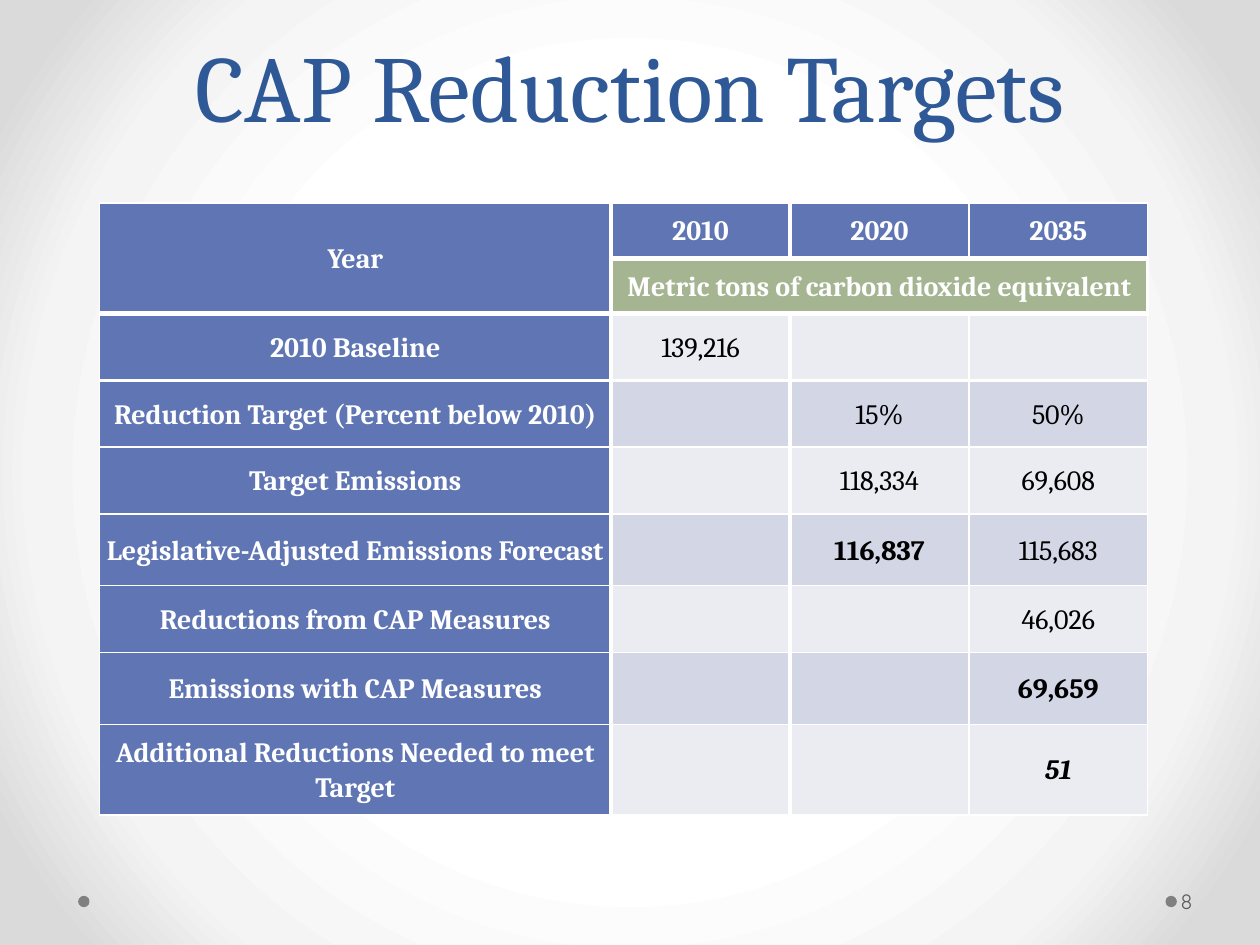
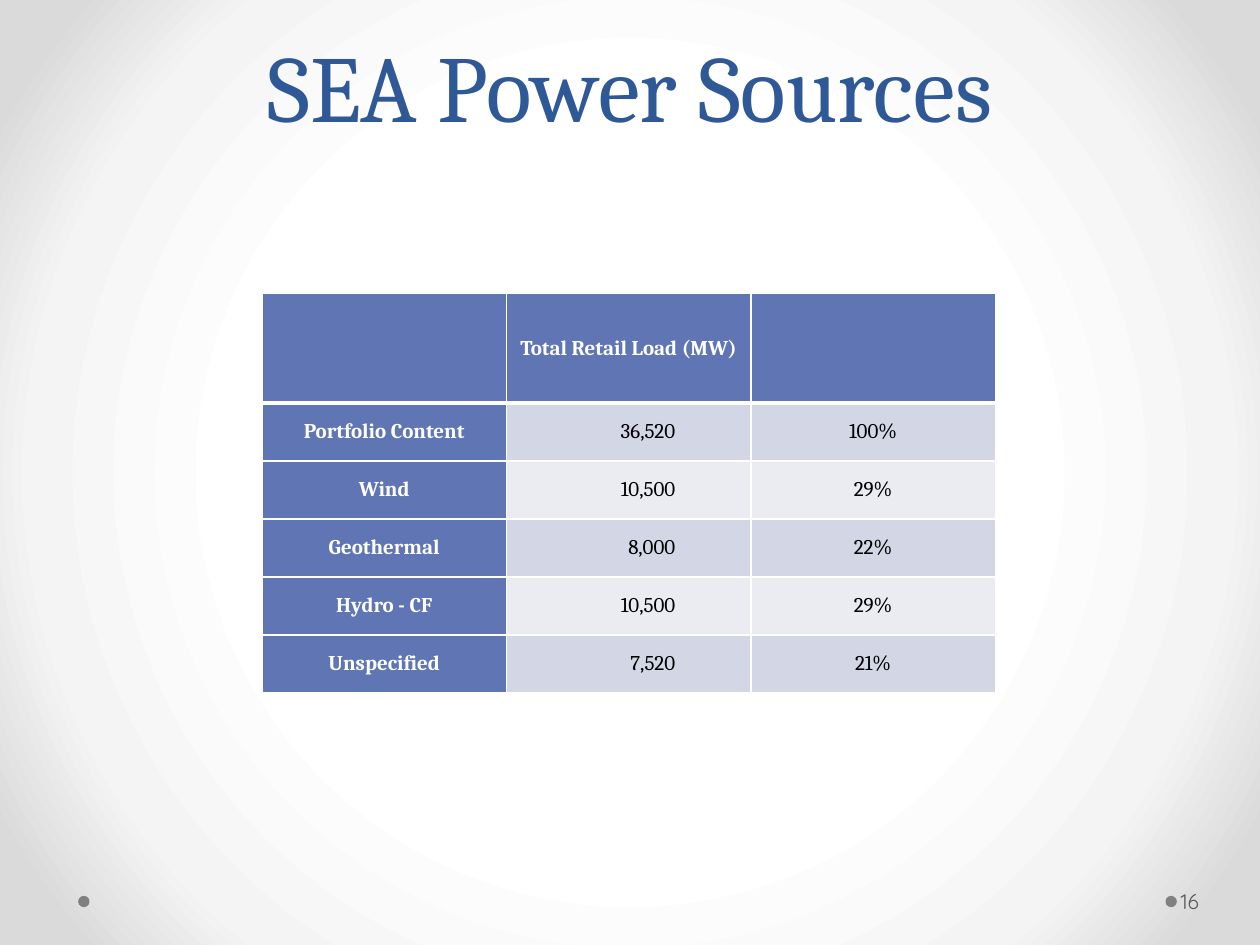
import pptx
import pptx.util
import pptx.dml.color
import pptx.enum.shapes
import pptx.enum.text
import pptx.oxml
import pptx.oxml.ns

Inches = pptx.util.Inches
Pt = pptx.util.Pt
Align = pptx.enum.text.PP_ALIGN
Anchor = pptx.enum.text.MSO_ANCHOR

WHITE = "FFFFFF"
BLACK = "000000"
NAVY = "2F5897"
BLUE = "6076B4"
GREEN = "A5B592"
BANDS = ("EAECF2", "D2D6E5")
DOT = "808080"
GRAY = "595959"
SERIF = "Cambria"
SANS = "Quicksand"
GLOW = ((50, WHITE), (76, "F4F4F4"), (92, "DADADA"))

GOALS = [
    ["Year", "2010", "2020", "2035"],
    ["", "Metric tons of carbon dioxide equivalent", "", ""],
    ["2010 Baseline", "139,216", "", ""],
    ["Reduction Target (Percent below 2010)", "", "15%", "50%"],
    ["Target Emissions", "", "118,334", "69,608"],
    ["Legislative-Adjusted Emissions Forecast", "", "116,837", "115,683"],
    ["Reductions from CAP Measures", "", "", "46,026"],
    ["Emissions with CAP Measures", "", "", "69,659"],
    ["Additional Reductions Needed to meet Target", "", "", "51"],
]
STRONG = ("116,837", "69,659", "51")

POWER = [
    ["", "Total Retail Load (MW)", ""],
    ["Portfolio Content", "36,520", "100%"],
    ["Wind", "10,500", "29%"],
    ["Geothermal", "8,000", "22%"],
    ["Hydro - CF", "10,500", "29%"],
    ["Unspecified", "7,520", "21%"],
]


def tint(code):
    return pptx.dml.color.RGBColor.from_string(code)


def paint(fill, code):
    fill.solid()
    fill.fore_color.rgb = tint(code)


def write(frame, text, size=12, font=SERIF, color=BLACK, bold=False,
          slant=False, align=Align.CENTER, lead=None, after=None):
    para = frame.paragraphs[0]
    para.alignment = align
    para.line_spacing = lead
    para.space_after = after
    run = para.add_run()
    run.text = text
    run.font.size = Pt(size)
    run.font.name = font
    run.font.bold = bold
    run.font.italic = slant
    run.font.color.rgb = tint(color)


def inset(frame, left, top, right, base):
    frame.margin_left = Inches(left)
    frame.margin_top = Inches(top)
    frame.margin_right = Inches(right)
    frame.margin_bottom = Inches(base)


def backdrop(master):
    master.background.fill.gradient()
    grad = master.element.find(".//" + pptx.oxml.ns.qn("p:bg")).find(
        ".//" + pptx.oxml.ns.qn("a:gradFill"))
    stops = "".join(
        f'<a:gs pos="{spot * 1000}"><a:srgbClr val="{code}"/></a:gs>'
        for spot, code in GLOW)
    space = pptx.oxml.ns.nsdecls("a")
    for child in list(grad):
        grad.remove(child)
    grad.append(pptx.oxml.parse_xml(f"<a:gsLst {space}>{stops}</a:gsLst>"))
    grad.append(pptx.oxml.parse_xml(
        f'<a:path {space} path="circle">'
        '<a:fillToRect l="50000" t="50000" r="50000" b="50000"/></a:path>'))


def add_dot(slide, left):
    dot = slide.shapes.add_shape(
        pptx.enum.shapes.MSO_SHAPE.OVAL,
        Inches(left), Inches(7.11), Inches(0.09), Inches(0.09))
    dot.shadow.inherit = False
    paint(dot.fill, DOT)
    dot.line.fill.background()


def add_title(slide, text, top):
    title = slide.shapes.title
    title.left, title.top = Inches(0.5), Inches(top)
    title.width, title.height = Inches(9), Inches(1.17 - top)
    frame = title.text_frame
    frame.word_wrap = True
    frame.auto_size = pptx.enum.text.MSO_AUTO_SIZE.NONE
    frame.vertical_anchor = Anchor.BOTTOM
    write(frame, text, size=54, color=NAVY, lead=Pt(58))


def add_count(slide, text):
    box = slide.shapes.add_textbox(
        Inches(9.34), Inches(6.95), Inches(0.61), Inches(0.4))
    frame = box.text_frame
    frame.word_wrap = True
    frame.vertical_anchor = Anchor.MIDDLE
    inset(frame, 0.03, 0.05, 0.05, 0.05)
    write(frame, text, font=SANS, color=GRAY, align=Align.LEFT)


def add_slide(deck, title, top, count):
    slide = deck.slides.add_slide(deck.slide_layouts[5])
    for left in (9.25, 0.62):
        add_dot(slide, left)
    add_title(slide, title, top)
    add_count(slide, count)
    return slide


def edge(cell, **widths):
    props = cell._tc.get_or_add_tcPr()
    for spot, (side, width) in enumerate(widths.items()):
        props.insert(spot, pptx.oxml.parse_xml(
            f'<a:ln{side} {pptx.oxml.ns.nsdecls("a")} w="{Pt(width)}">'
            f'<a:solidFill><a:srgbClr val="{WHITE}"/></a:solidFill>'
            f'</a:ln{side}>'))


def add_grid(slide, data, left, top, wide, high, rules, heads, pad, **form):
    table = slide.shapes.add_table(
        len(data), len(wide), Inches(left), Inches(top),
        Inches(sum(wide)), Inches(sum(high))).table
    table.first_row = False
    table.horz_banding = False
    for col, width in zip(table.columns, wide):
        col.width = Inches(width)
    for row, height in zip(table.rows, high):
        row.height = Inches(height)
    across, down = rules
    for r, line in enumerate(data):
        for c, text in enumerate(line):
            cell = table.cell(r, c)
            head = r < heads or c == 0
            paint(cell.fill, BLUE if head else BANDS[r % 2])
            edge(cell, L=down[c], R=down[c + 1], T=across[r], B=across[r + 1])
            cell.vertical_anchor = Anchor.MIDDLE
            inset(cell, *pad)
            if text:
                write(cell.text_frame, text, color=WHITE if head else BLACK,
                      bold=head or text in STRONG, slant=text == "51", **form)
    return table


def show_goals(deck):
    slide = add_slide(deck, "CAP Reduction Targets", 0, "8")
    table = add_grid(
        slide, GOALS, 0.79, 1.61, [4.06] + [1.42] * 3,
        [0.44, 0.44, 0.53, 0.53, 0.53, 0.57, 0.53, 0.57, 0.72],
        ([1, 3, 3, 2.25] + [1] * 6, [1, 2.25, 2.25, 1, 1]), 2,
        (0.04, 0.03, 0.04, 0.03), size=16, lead=1.07, after=Pt(8))
    table.cell(0, 0).merge(table.cell(1, 0))
    units = table.cell(1, 1)
    units.merge(table.cell(1, 3))
    paint(units.fill, GREEN)
    for cell in (table.cell(0, 1), units):
        inset(cell, 0, 0, 0, 0)


def show_power(deck):
    slide = add_slide(deck, "SEA Power Sources", 0.3, "16")
    table = add_grid(
        slide, POWER, 2.08, 2.33, [1.94] * 3, [0.87] + [0.46] * 5,
        ([1, 3] + [1] * 5, [1] * 4), 1, (0.01, 0.01, 0.01, 0.01))
    for r in range(1, len(POWER)):
        load = table.cell(r, 1)
        load.margin_right = Inches(0.6)
        load.text_frame.paragraphs[0].alignment = Align.RIGHT


def main():
    deck = pptx.Presentation()
    deck.slide_width, deck.slide_height = Inches(10), Inches(7.5)
    backdrop(deck.slide_master)
    show_goals(deck)
    show_power(deck)
    deck.save("out.pptx")


if __name__ == "__main__":
    main()
